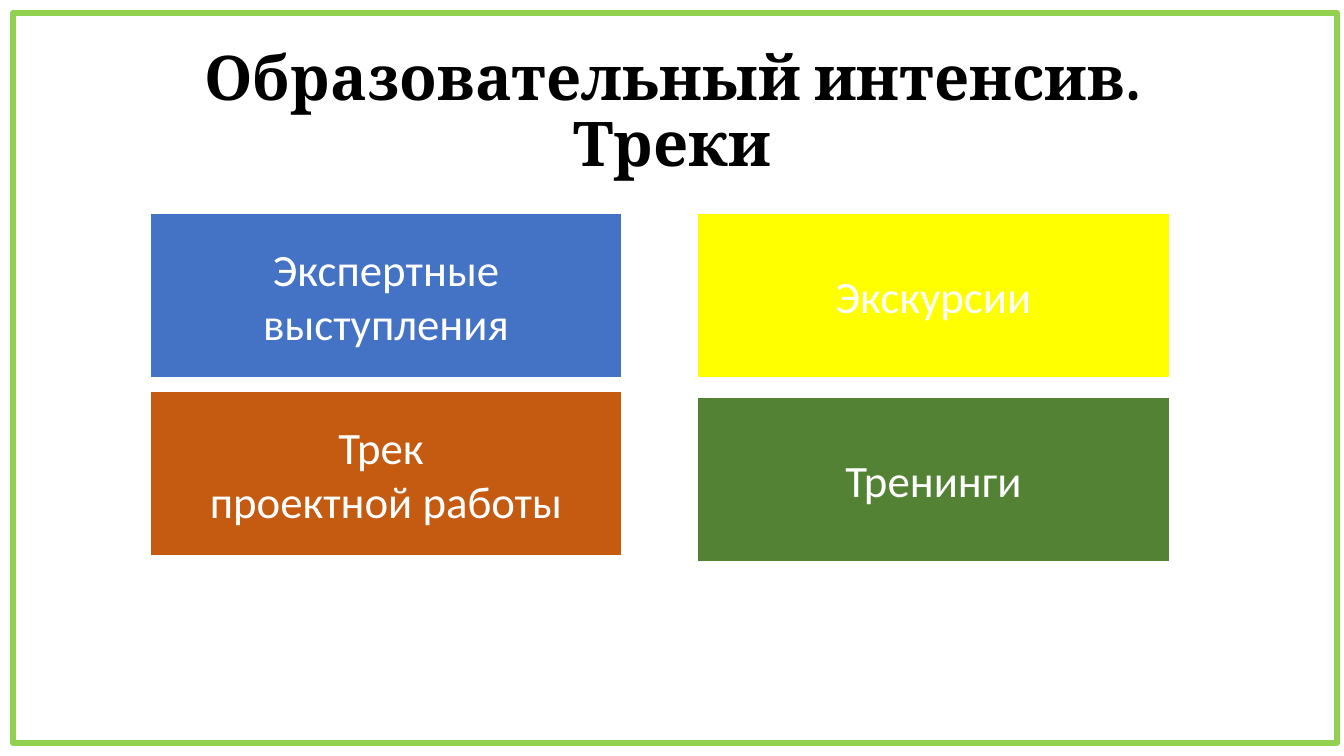
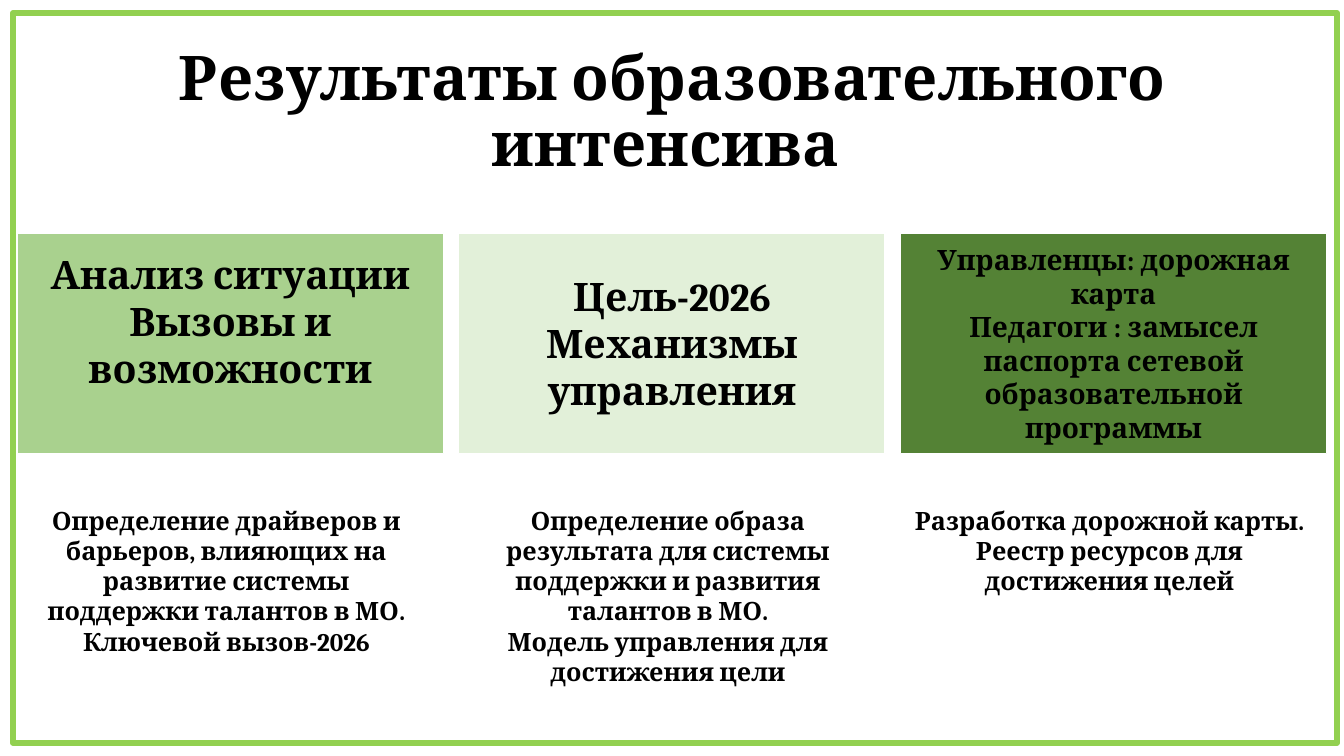
from pptx import Presentation
from pptx.dml.color import RGBColor
from pptx.enum.shapes import MSO_SHAPE as Shape
from pptx.enum.text import MSO_ANCHOR as Anchor, MSO_AUTO_SIZE as AutoSize, PP_ALIGN as Align
from pptx.util import Inches, Pt

COLORS = {
    "white": "FFFFFF", "black": "000000", "frame": "92D050",
    "blue": "4472C4", "orange": "C55A11", "yellow": "FFFF00",
    "green": "548235", "light_green": "A9D18E", "pale_green": "E2F0D9",
}
TITLE_FONT = {"name": "Cambria", "size": Pt(44), "bold": True}
TRACK_FONT = {"name": "Calibri", "size": Pt(32), "bold": False}
HEADING_FONT = {"name": "Cambria", "size": Pt(28), "bold": True}
SMALL_HEADING_FONT = {**HEADING_FONT, "size": Pt(20)}
DETAIL_FONT = {**HEADING_FONT, "size": Pt(18)}
TITLE_BOX = (0.92, 0.4, 11.5, 1.45)
FRAME_BOX = (0.13, 0.13, 13.13, 7.24)


def rgb(name):
    return RGBColor.from_string(COLORS[name])


def inches(box):
    return [Inches(length) for length in box]


def write(shape, lines, font, color, anchor=Anchor.MIDDLE, spacing=None):
    """Fill a shape with centred paragraphs of one style."""
    frame = shape.text_frame
    settings = {"word_wrap": True, "auto_size": AutoSize.NONE, "vertical_anchor": anchor}
    for name, value in settings.items():
        setattr(frame, name, value)
    frame.text = "\n".join(lines)
    for paragraph in frame.paragraphs:
        paragraph.alignment = Align.CENTER
        paragraph.line_spacing = spacing
        for run in paragraph.runs:
            for name, value in font.items():
                setattr(run.font, name, value)
            run.font.color.rgb = rgb(color)


def add_rectangle(slide, box, fill, line, width):
    shape = slide.shapes.add_shape(Shape.RECTANGLE, *inches(box))
    shape.shadow.inherit = False
    if fill:
        shape.fill.solid()
        shape.fill.fore_color.rgb = rgb(fill)
    else:
        shape.fill.background()
    shape.line.color.rgb = rgb(line)
    shape.line.width = Pt(width)
    return shape


def add_card(slide, box, fill, lines, font, color):
    card = add_rectangle(slide, box, fill, "white", 1)
    write(card, lines, font, color)
    return card


def add_titled_slide(presentation, title):
    """Slide with the shared title and green frame."""
    slide = presentation.slides.add_slide(presentation.slide_layouts[5])
    placeholder = slide.shapes.title
    names = ("left", "top", "width", "height")
    for name, value in zip(names, inches(TITLE_BOX)):
        setattr(placeholder, name, value)
    write(placeholder, [title], TITLE_FONT, "black", spacing=0.9)
    add_rectangle(slide, FRAME_BOX, None, "frame", 4.5)
    return slide


def add_track_column(slide, left, top, gap, tracks):
    """Stack of track cards, one under another."""
    width, height = 4.68, 1.63
    for row, (fill, lines) in enumerate(tracks):
        box = (left, top + row * (height + gap), width, height)
        add_card(slide, box, fill, lines, TRACK_FONT, "white")


def add_result_column(slide, left, top, result):
    """Coloured heading card with its details below."""
    fill, heading, font, lift, details = result
    card = add_card(slide, (left, top, 4.23, 2.19), fill, heading, font, "black")
    card.text_frame.margin_bottom = Inches(0.05 + lift)
    text_box = slide.shapes.add_textbox(*inches((left, top + 2.65, 4.15, 1.62)))
    write(text_box, details, DETAIL_FONT, "black", Anchor.TOP)


def build_tracks(presentation):
    slide = add_titled_slide(presentation, "Образовательный интенсив. Треки")
    add_track_column(slide, 1.49, 2.12, 0.13, [
        ("blue", ["Экспертные выступления"]),
        ("orange", ["Трек ", "проектной работы"]),
    ])
    add_track_column(slide, 6.92, 2.12, 0.19, [
        ("yellow", ["Экскурсии"]),
        ("green", ["Тренинги"]),
    ])


def build_results(presentation):
    slide = add_titled_slide(presentation, "Результаты образовательного интенсива ")
    # Fill, heading, heading font, upward shift of the heading, details
    results = [
        ("light_green", ["Анализ ситуации", "Вызовы и возможности"], HEADING_FONT, 0.45,
         ["Определение драйверов и барьеров, влияющих на развитие системы "
          "поддержки талантов в МО.", "Ключевой вызов-2026"]),
        ("pale_green", ["Цель-2026", "Механизмы управления"], HEADING_FONT, 0,
         ["Определение образа результата для системы поддержки и развития "
          "талантов в МО.", "Модель управления для достижения цели"]),
        ("green", ["Управленцы: дорожная карта",
                   "Педагоги : замысел паспорта сетевой образовательной программы"],
         SMALL_HEADING_FONT, 0,
         ["Разработка дорожной карты.", "Реестр ресурсов для достижения целей"]),
    ]
    for column, result in enumerate(results):
        add_result_column(slide, 0.17 + column * 4.38, 2.31, result)


def main():
    presentation = Presentation()
    presentation.slide_width = Inches(13.33)
    presentation.slide_height = Inches(7.5)
    build_tracks(presentation)
    build_results(presentation)
    presentation.save("out.pptx")


if __name__ == "__main__":
    main()
